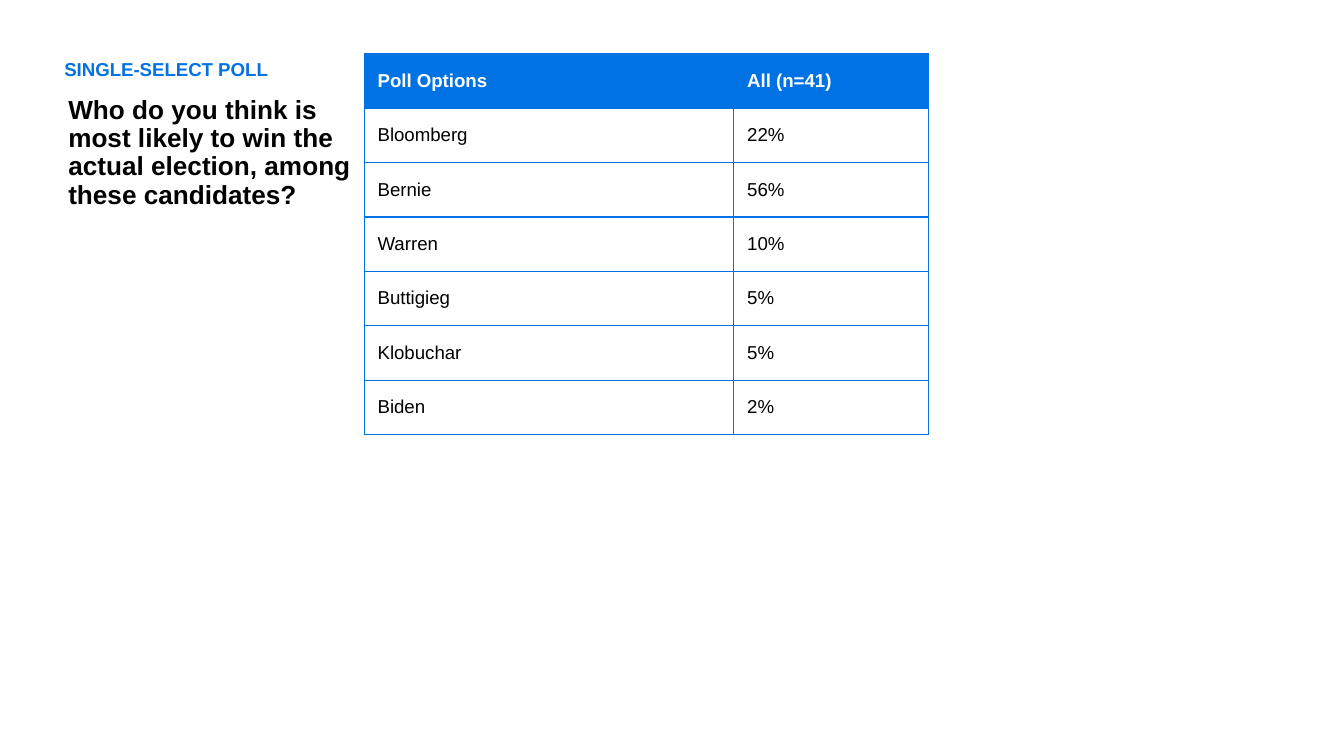
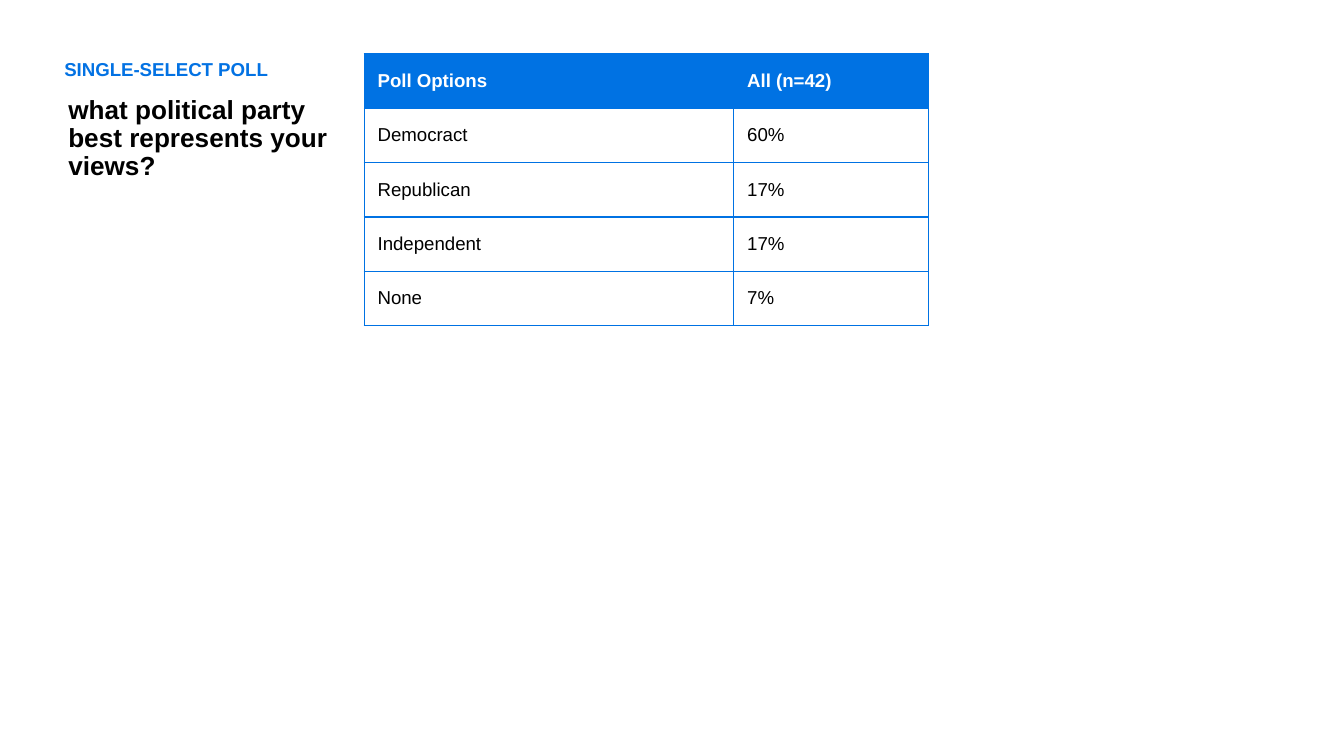
from dataclasses import dataclass

from lxml import etree
from pptx import Presentation
from pptx import util as u
from pptx.dml.color import RGBColor
from pptx.enum import text
from pptx.oxml import ns

PX = 4572
COLORS = {"accent": "0372E3", "table": "0072E3", "ink": "000000", "paper": "FFFFFF"}
FONT = "Arial"
KICKER = "SINGLE-SELECT POLL"
TABLE_LEFT, TABLE_TOP = 542, 80
COLUMN_WIDTHS = (550, 290)
ROW_HEIGHT = 81
BORDER_PT = 0.75


@dataclass(frozen=True)
class Label:
    """Place and style shared by one kind of slide text."""

    left: int
    top: int
    width: int
    height: int
    size: int
    color: str


@dataclass(frozen=True)
class Poll:
    """One poll question with its answers."""

    question: str
    respondents: int
    answers: tuple[tuple[str, int], ...]


QUESTION_LABEL = Label(82, 134, 460, 882, 14, "ink")
KICKER_LABEL = Label(76, 80, 464, 56, 10, "accent")

POLLS = (
    Poll(
        "Who do you think is most likely to win the actual election, among these candidates?",
        41,
        (("Bloomberg", 22), ("Bernie", 56), ("Warren", 10),
         ("Buttigieg", 5), ("Klobuchar", 5), ("Biden", 2)),
    ),
    Poll(
        "what political party best represents your views?",
        42,
        (("Democract", 60), ("Republican", 17), ("Independent", 17), ("None", 7)),
    ),
)


def px(length: int) -> u.Emu:
    """Turn whole pixels into EMU."""
    return u.Emu(length * PX)


def style_font(paragraph, size: int, color: str, bold: bool) -> None:
    """Format every run of a paragraph."""
    for run in paragraph.runs:
        run.font.name = FONT
        run.font.size = u.Pt(size)
        run.font.bold = bold
        run.font.color.rgb = RGBColor.from_string(COLORS[color])


def add_label(slide, label: Label, wording: str) -> None:
    """Add a bold wrapped text box."""
    box = slide.shapes.add_textbox(
        px(label.left), px(label.top), px(label.width), px(label.height))
    frame = box.text_frame
    frame.word_wrap = True
    frame.text = wording
    paragraph = frame.paragraphs[0]
    paragraph.line_spacing = 0.9
    paragraph.space_before = u.Pt(10)
    style_font(paragraph, label.size, label.color, True)


def add_borders(cell) -> None:
    """Draw the four cell borders."""
    properties = cell._tc.get_or_add_tcPr()
    for position, side in enumerate(("lnL", "lnR", "lnT", "lnB")):
        line = etree.Element(ns.qn(f"a:{side}"), w=str(u.Pt(BORDER_PT)))
        fill = etree.SubElement(line, ns.qn("a:solidFill"))
        etree.SubElement(fill, ns.qn("a:srgbClr"), val=COLORS["table"])
        properties.insert(position, line)


def fill_cell(cell, wording: str, is_header: bool) -> None:
    """Write and style one table cell."""
    cell.text_frame.text = wording
    cell.vertical_anchor = text.MSO_ANCHOR.MIDDLE
    cell.fill.solid()
    cell.fill.fore_color.rgb = RGBColor.from_string(
        COLORS["table" if is_header else "paper"])
    style_font(cell.text_frame.paragraphs[0], 10,
               "paper" if is_header else "ink", is_header)
    add_borders(cell)


def add_results(slide, poll: Poll) -> None:
    """Add the table of poll answers."""
    rows = [("Poll Options", f"All (n={poll.respondents})")]
    rows += [(option, f"{share}%") for option, share in poll.answers]
    results = slide.shapes.add_table(
        len(rows), len(COLUMN_WIDTHS), px(TABLE_LEFT), px(TABLE_TOP),
        px(sum(COLUMN_WIDTHS)), px(ROW_HEIGHT * len(rows))).table
    results.horz_banding = False
    for column, width in zip(results.columns, COLUMN_WIDTHS):
        column.width = px(width)
    for row_index, row in enumerate(rows):
        results.rows[row_index].height = px(ROW_HEIGHT)
        for column_index, wording in enumerate(row):
            fill_cell(results.cell(row_index, column_index), wording, row_index == 0)


def main() -> None:
    """Build the poll slides and save them."""
    deck = Presentation()
    deck.slide_width, deck.slide_height = px(2000), px(1125)
    for poll in POLLS:
        slide = deck.slides.add_slide(deck.slide_layouts[6])
        add_label(slide, QUESTION_LABEL, poll.question)
        add_label(slide, KICKER_LABEL, KICKER)
        add_results(slide, poll)
    deck.save("out.pptx")


if __name__ == "__main__":
    main()
